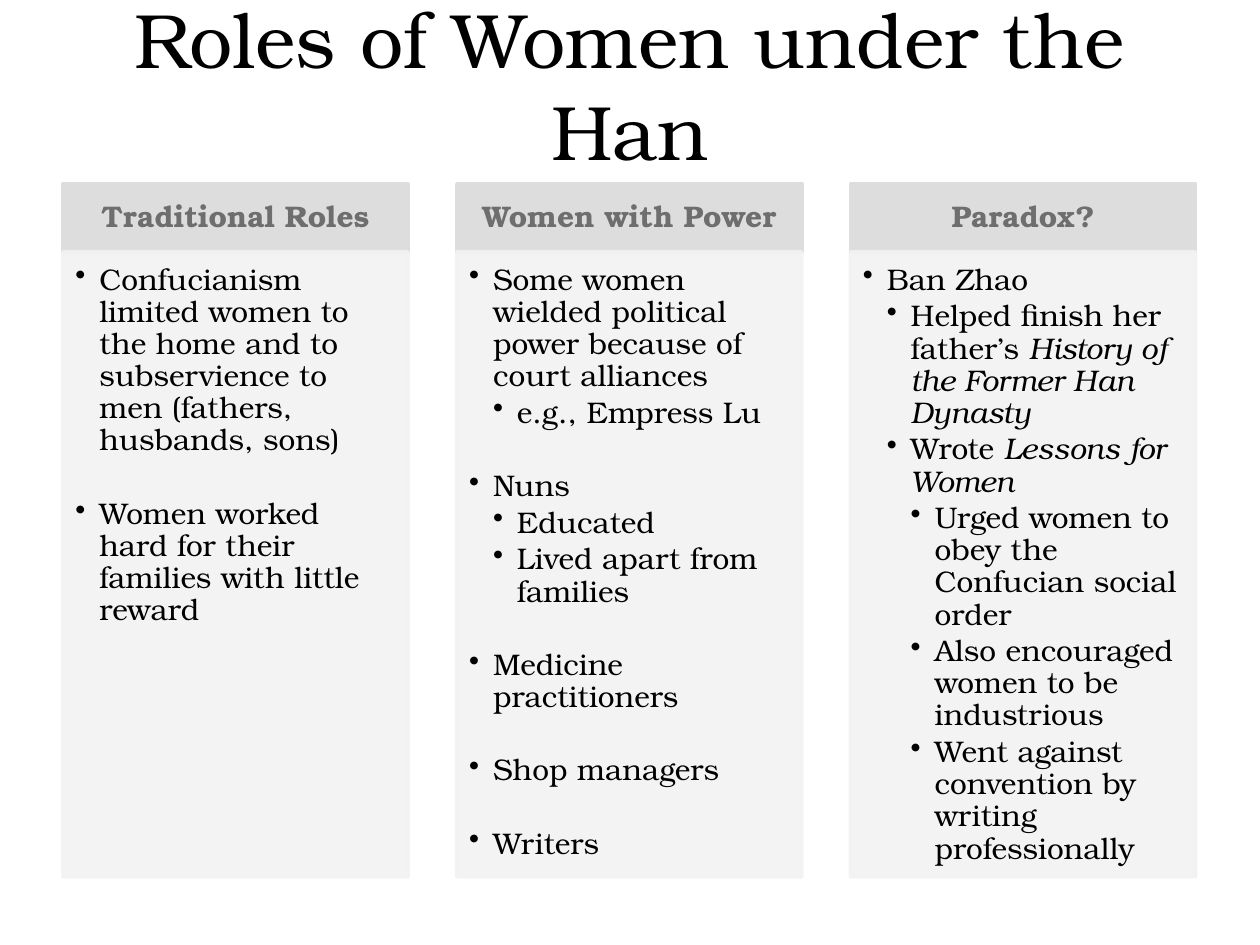
from lxml import etree
from pptx import Presentation
from pptx.dml.color import RGBColor
from pptx.enum.shapes import MSO_SHAPE as SHAPE
from pptx.enum.text import MSO_ANCHOR as ANCHOR, MSO_AUTO_SIZE as AUTO, PP_ALIGN as ALIGN
from pptx.oxml.ns import qn
from pptx.util import Inches, Pt

FONT = "TeX Gyre Bonum"
TEXT_SIZE = 17
LEFT, COL_W, COL_STEP = 0.5, 2.74, 3.125
HEAD_TOP, HEAD_H, BODY_H = 1.46, 0.54, 4.96
INDENT = 0.19
GROUP_GAP = 21

# Each group is a list of (level, text); asterisks enclose italics.
COLUMNS = [
    ("Traditional Roles", [
        [(0, "Confucianism limited women to the home and to subservience "
             "to men (fathers, husbands, sons)")],
        [(0, "Women worked hard for their families with little reward")],
    ]),
    ("Women with Power", [
        [(0, "Some women wielded political power because of court alliances"),
         (1, "e.g., Empress Lu")],
        [(0, "Nuns"), (1, "Educated"), (1, "Lived apart from families")],
        [(0, "Medicine practitioners")],
        [(0, "Shop managers")],
        [(0, "Writers")],
    ]),
    ("Paradox?", [
        [(0, "Ban Zhao"),
         (1, "Helped finish her father’s *History of the Former Han Dynasty*"),
         (1, "Wrote *Lessons for Women*"),
         (2, "Urged women to obey the Confucian social order"),
         (2, "Also encouraged women to be industrious"),
         (2, "Went against convention by writing professionally")],
    ]),
]


def rgb(color):
    return RGBColor.from_string(color)


def add_text(p, text, size=TEXT_SIZE, color="000000", bold=False, align=ALIGN.LEFT,
             spacing=None, before=0, after=0):
    """Fill a paragraph; parts between asterisks become italic."""
    p.alignment = align
    p.line_spacing = spacing
    p.space_before, p.space_after = Pt(before), Pt(after)
    for i, part in enumerate(text.split("*")):
        if part:
            r = p.add_run()
            r.text = part
            r.font.name, r.font.size, r.font.bold = FONT, Pt(size), bold
            r.font.italic = i % 2 == 1
            r.font.color.rgb = rgb(color)


def add_bullet(p, level):
    p.level = level
    pPr = p._p.get_or_add_pPr()
    pPr.set("marL", str(Inches(INDENT * (level + 1))))
    pPr.set("indent", str(Inches(-INDENT)))
    etree.SubElement(pPr, qn("a:buChar")).set("char", "•")


def add_panel(slide, x, y, h, color, insets, anchor, opacity=100):
    """Add a filled rectangle and return its text frame."""
    sp = slide.shapes.add_shape(SHAPE.RECTANGLE, Inches(x), Inches(y),
                                Inches(COL_W), Inches(h))
    sp.shadow.inherit = False
    sp.line.width = Pt(2)
    for fill in (sp.fill, sp.line.fill):
        fill.solid()
        fill.fore_color.rgb = rgb(color)
    if opacity < 100:
        for clr in sp._element.spPr.iter(qn("a:srgbClr")):
            etree.SubElement(clr, qn("a:alpha")).set("val", str(opacity * 1000))
    tf = sp.text_frame
    tf.word_wrap, tf.vertical_anchor = True, anchor
    tf.margin_left, tf.margin_top, tf.margin_right, tf.margin_bottom = map(Inches, insets)
    return tf


def add_title(slide, text):
    title = slide.shapes.title
    title.left, title.top = Inches(0.5), Inches(0)
    title.width, title.height = Inches(9), Inches(1.33)
    tf = title.text_frame
    tf.auto_size, tf.vertical_anchor = AUTO.NONE, ANCHOR.MIDDLE
    add_text(tf.paragraphs[0], text, size=44, align=ALIGN.CENTER)


def add_column(slide, x, heading, groups):
    tf = add_panel(slide, x, HEAD_TOP, HEAD_H, "DDDDDD",
                   (0.13, 0.08, 0.13, 0.08), ANCHOR.MIDDLE)
    add_text(tf.paragraphs[0], heading, color="6E6E6E", bold=True,
             align=ALIGN.CENTER, spacing=0.9)

    tf = add_panel(slide, x, HEAD_TOP + HEAD_H, BODY_H, "F2F2F2",
                   (0.1, 0.1, 0.13, 0.15), ANCHOR.TOP, opacity=90)
    p = tf.paragraphs[0]
    for g, group in enumerate(groups):
        for i, (level, text) in enumerate(group):
            if g or i:
                p = tf.add_paragraph()
            add_text(p, text, spacing=0.9, after=2.55,
                     before=GROUP_GAP if g and i == 0 else 0)
            add_bullet(p, level)


def main():
    prs = Presentation()
    prs.slide_width, prs.slide_height = Inches(10), Inches(7.5)
    slide = prs.slides.add_slide(prs.slide_layouts[5])
    add_title(slide, "Roles of Women under the Han")
    for i, (heading, groups) in enumerate(COLUMNS):
        add_column(slide, LEFT + i * COL_STEP, heading, groups)
    prs.save("out.pptx")


if __name__ == "__main__":
    main()
